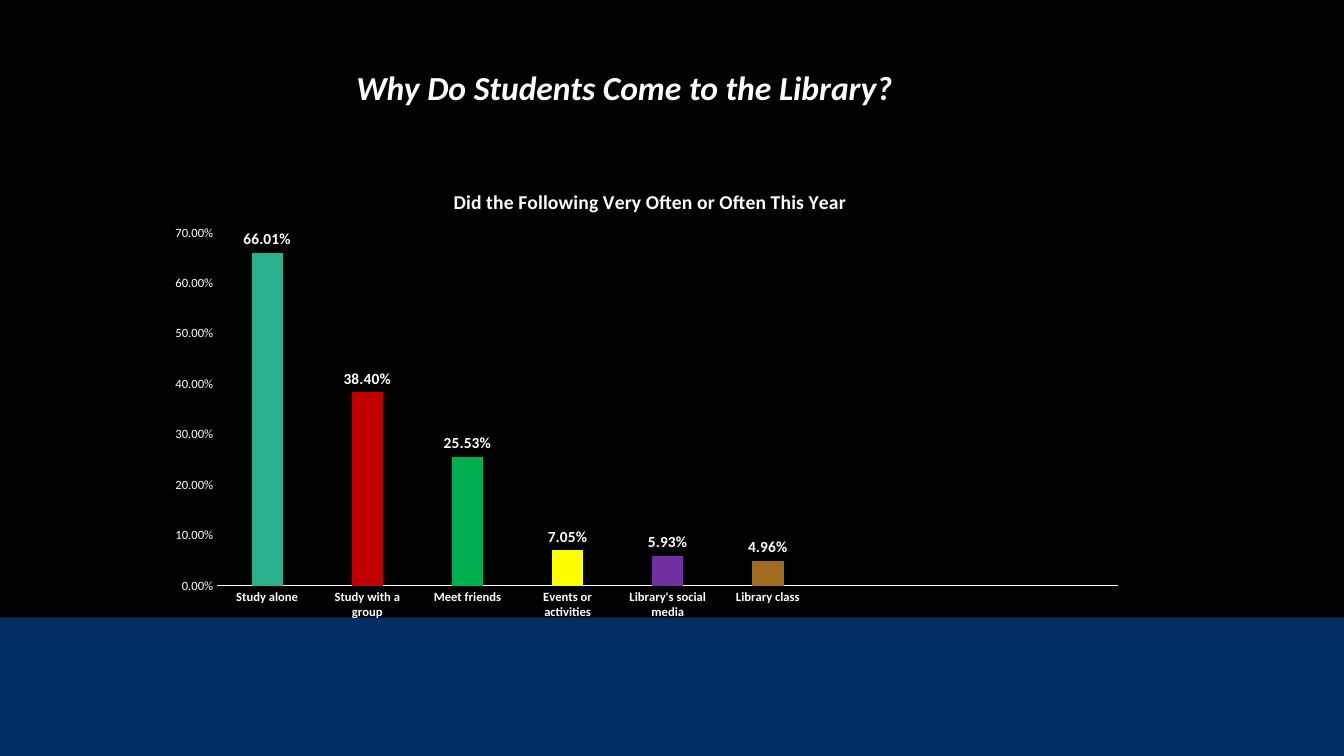
from lxml import etree
from pptx import Presentation
from pptx import util as u
from pptx.chart.data import CategoryChartData
from pptx.dml.color import RGBColor
from pptx.enum import chart as ch, shapes, text
from pptx.oxml import parse_xml
from pptx.oxml.ns import nsdecls

COLORS = {
    "black": "000000", "white": "FFFFFF", "navy": "002D62",
    "teal": "29AF8C", "red": "C00000", "green": "00B050",
    "yellow": "FFFF00", "purple": "7030A0", "brown": "A26921",
}
REASONS = [
    ("Study alone", 0.6601, "teal"),
    ("Study with a group", 0.384, "red"),
    ("Meet friends", 0.2553, "green"),
    ("Events or activities", 0.0705, "yellow"),
    ("Library's social media", 0.0593, "purple"),
    ("Library\u00a0class", 0.0496, "brown"),
]
EMPTY_SLOTS = 3


def style_font(font, size, bold=False, italic=False):
    font.name = "Calibri"
    font.size = u.Pt(size)
    font.bold = bold
    font.italic = italic
    font.color.rgb = RGBColor.from_string(COLORS["white"])


def manual_layout(**settings):
    """Return a c:layout element that places a chart part by fractions of the chart."""
    entries = "".join(f'<c:{name} val="{value}"/>' for name, value in settings.items())
    return parse_xml(
        f'<c:layout {nsdecls("c")}><c:manualLayout>{entries}</c:manualLayout></c:layout>')


presentation = Presentation()
presentation.slide_width = u.Pt(960)
presentation.slide_height = u.Pt(540)
slide = presentation.slides.add_slide(presentation.slide_layouts[5])
slide.background.fill.solid()
slide.background.fill.fore_color.rgb = RGBColor.from_string(COLORS["black"])

# Bottom band
band = slide.shapes.add_shape(
    shapes.MSO_SHAPE.RECTANGLE, u.Pt(0), u.Pt(441), u.Pt(960), u.Pt(99))
band.shadow.inherit = False
band.fill.solid()
band.fill.fore_color.rgb = RGBColor.from_string(COLORS["navy"])
band.line.fill.background()

# Slide title
title = slide.shapes.title
title.left, title.top, title.width, title.height = (
    u.Pt(134.6), u.Pt(47.5), u.Pt(622.8), u.Pt(36))
frame = title.text_frame
frame.word_wrap = True
frame.auto_size = text.MSO_AUTO_SIZE.NONE
frame.vertical_anchor = text.MSO_ANCHOR.TOP
paragraph = frame.paragraphs[0]
paragraph.alignment = text.PP_ALIGN.CENTER
paragraph.line_spacing = 0.9
paragraph.space_before = u.Pt(0)
run = paragraph.add_run()
run.text = "Why Do Students Come to the Library?"
style_font(run.font, 24, bold=True, italic=True)

# Chart of reasons
chart_data = CategoryChartData(number_format="0.00%")
chart_data.categories = [name for name, _, _ in REASONS] + [""] * EMPTY_SLOTS
chart_data.add_series("Series 1", [value for _, value, _ in REASONS] + [None] * EMPTY_SLOTS)
chart = slide.shapes.add_chart(
    ch.XL_CHART_TYPE.COLUMN_CLUSTERED,
    u.Pt(110.9), u.Pt(118.8), u.Pt(702), u.Pt(330.5), chart_data).chart
chart.has_legend = False
style_font(chart.font, 10)

chart.has_title = True
chart_title = chart.chart_title
run = chart_title.text_frame.paragraphs[0].add_run()
run.text = "Did the Following Very Often or Often This Year"
style_font(run.font, 14, bold=True)
chart_title.include_in_layout = False
title_element = chart_title._element
for layout in title_element.findall("c:layout", title_element.nsmap):
    title_element.remove(layout)
title_element.insert(1, manual_layout(xMode="edge", yMode="edge", x=0.3, y=0.04))

plot_area = chart._chartSpace.chart.plotArea
for layout in plot_area.findall("c:layout", plot_area.nsmap):
    plot_area.remove(layout)
plot_area.insert(0, manual_layout(
    layoutTarget="inner", xMode="edge", yMode="edge", x=0.063, y=0.144, w=0.917, h=0.763))

plot = chart.plots[0]
plot.gap_width = 219
plot.overlap = -27
plot.vary_by_categories = False
series = plot.series[0]
series.format.fill.solid()
series.format.fill.fore_color.rgb = RGBColor.from_string(COLORS["teal"])
for index, (_, _, color) in enumerate(REASONS):
    fill = series.points[index].format.fill
    fill.solid()
    fill.fore_color.rgb = RGBColor.from_string(COLORS[color])

labels = series.data_labels
labels.show_value = True
labels.number_format = "0.00%"
labels.number_format_is_linked = False
labels.position = ch.XL_LABEL_POSITION.OUTSIDE_END
style_font(labels.font, 11, bold=True)

for axis, bold in ((chart.category_axis, True), (chart.value_axis, False)):
    axis.has_major_gridlines = False
    axis.major_tick_mark = ch.XL_TICK_MARK.NONE
    axis.minor_tick_mark = ch.XL_TICK_MARK.NONE
    style_font(axis.tick_labels.font, 9, bold=bold)

category_line = chart.category_axis.format.line
category_line.width = u.Pt(0.75)
category_line.color.rgb = RGBColor.from_string(COLORS["white"])
value_axis = chart.value_axis
value_axis.format.line.fill.background()
value_axis.minimum_scale = 0
value_axis.maximum_scale = 0.7
value_axis.major_unit = 0.1
value_axis.tick_labels.number_format = "0.00%"
value_axis.tick_labels.number_format_is_linked = False

presentation.save("out.pptx")
